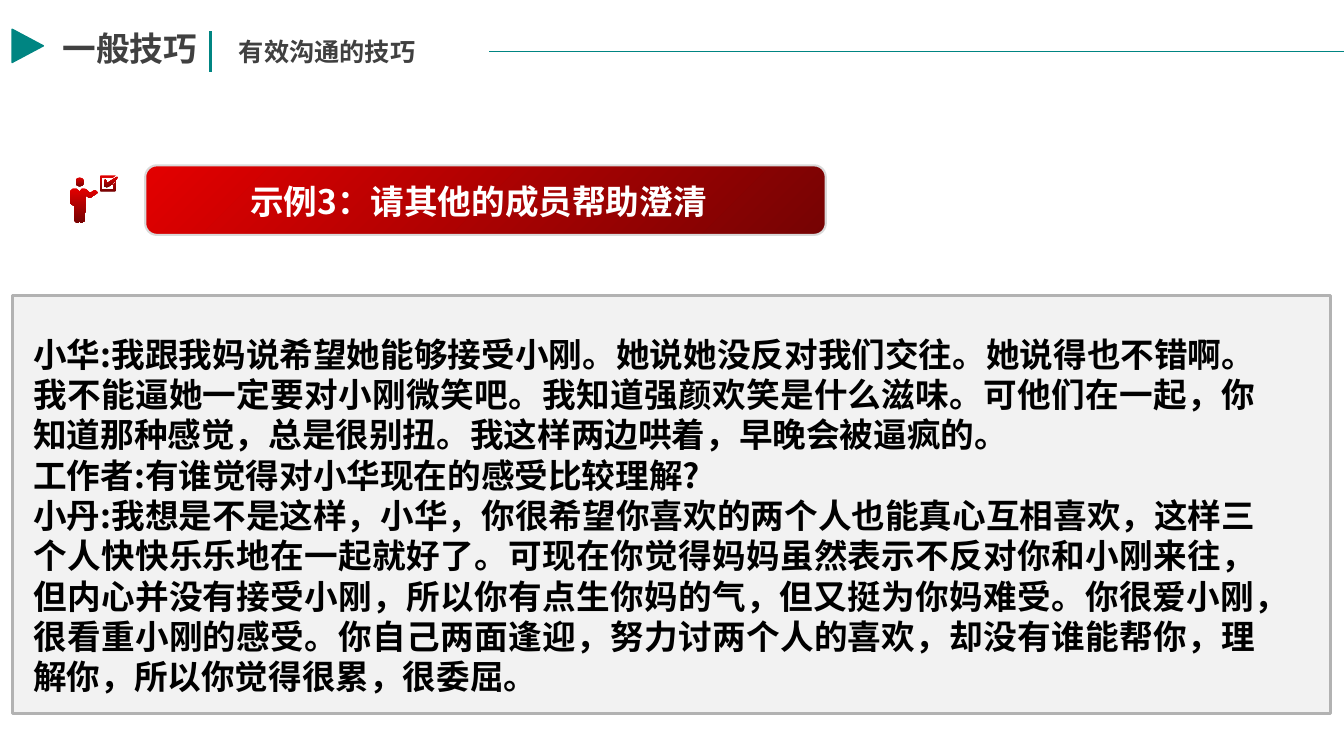
from lxml import etree
from pptx import Presentation
from pptx import util as u
from pptx.dml.color import RGBColor
from pptx.enum import shapes, text
from pptx.oxml.ns import qn

PX = 9144
FONT = "Noto Sans CJK SC"
COLORS = {
    "teal": "008582", "heading": "404040", "black": "000000", "white": "FFFFFF",
    "panel": "F2F2F2", "panel_edge": "B2B2B2", "banner_edge": "D9D9D9",
    "red": "E30000", "dark_red": "760303",
}
DIALOGUE = [
    ("小华", "我跟我妈说希望她能够接受小刚。她说她没反对我们交往。她说得也不错啊。"
     "我不能逼她一定要对小刚微笑吧。我知道强颜欢笑是什么滋味。可他们在一起，"
     "你知道那种感觉，总是很别扭。我这样两边哄着，早晚会被逼疯的。"),
    ("工作者", "有谁觉得对小华现在的感受比较理解?"),
    ("小丹", "我想是不是这样，小华，你很希望你喜欢的两个人也能真心互相喜欢，"
     "这样三个人快快乐乐地在一起就好了。可现在你觉得妈妈虽然表示不反对你和小刚来往，"
     "但内心并没有接受小刚，所以你有点生你妈的气，但又挺为你妈难受。你很爱小刚，"
     "很看重小刚的感受。你自己两面逢迎，努力讨两个人的喜欢，却没有谁能帮你，"
     "理解你，所以你觉得很累，很委屈。"),
]
BODY = [
    (84, 219), (81, 221), (79, 220), (76, 221), (74, 219), (74, 204), (73, 204),
    (70, 202), (69, 195), (70, 189), (72, 187), (76, 187), (79, 190), (81, 187),
    (84, 187), (86, 188), (89, 191), (90, 191), (93, 189), (95, 189), (97, 191),
    (96, 192), (93, 194), (90, 196), (88, 196), (85, 194), (85, 193),
]
CHECKBOX = [
    (100, 174), (115, 174), (112, 176), (101, 176), (101, 188), (113, 188),
    (113, 183), (115, 180), (115, 189), (114, 190), (100, 190), (99, 189), (99, 175),
]
TICK = [
    (105, 178), (103, 179), (104, 185), (106, 186), (111, 183), (117, 176),
    (116, 175), (112, 178), (106, 182),
]


class Deck:
    def __init__(self, width, height):
        self.prs = Presentation()
        self.prs.slide_width, self.prs.slide_height = width * PX, height * PX
        self.s = self.prs.slides.add_slide(self.prs.slide_layouts[1])

    def color(self, name):
        return RGBColor.from_string(COLORS[name])

    def paint(self, sp, fill, line=None, weight=1, angle=0):
        sp.shadow.inherit = False
        if isinstance(fill, tuple):
            sp.fill.gradient()
            sp.fill.gradient_angle = 360 - angle
            for stop, name, pos in zip(sp.fill.gradient_stops, fill, (0, 1)):
                stop.color.rgb = self.color(name)
                stop.position = pos
        else:
            sp.fill.solid()
            sp.fill.fore_color.rgb = self.color(fill)
        if line:
            sp.line.color.rgb = self.color(line)
            sp.line.width = u.Pt(weight)
        else:
            sp.line.fill.background()

    def shape(self, kind, box, fill, line=None, weight=1, angle=0, parent=None):
        sp = (parent or self.s).shapes.add_shape(kind, *(v * PX for v in box))
        self.paint(sp, fill, line, weight, angle)
        return sp

    def outline(self, points, fill, angle, parent):
        builder = parent.shapes.build_freeform(*points[0], scale=PX)
        builder.add_line_segments(points[1:])
        self.paint(builder.convert_to_shape(), fill, angle=angle)

    def line(self, x1, y1, x2, y2, color, weight):
        c = self.s.shapes.add_connector(
            shapes.MSO_CONNECTOR.STRAIGHT, *(v * PX for v in (x1, y1, x2, y2)))
        c.line.color.rgb = self.color(color)
        c.line.width = u.Pt(weight)
        etree.SubElement(c._element.spPr, qn("a:effectLst"))

    def fill_text(self, sp, paragraphs, size, color, align, wrap=True, margin=None):
        tf = sp.text_frame
        tf.word_wrap = wrap
        tf.auto_size = text.MSO_AUTO_SIZE.NONE
        tf.vertical_anchor = text.MSO_ANCHOR.TOP
        if margin is not None:
            tf.margin_left = tf.margin_right = tf.margin_top = tf.margin_bottom = margin
        for i, runs in enumerate(paragraphs):
            p = tf.add_paragraph() if i else tf.paragraphs[0]
            pPr = p._p.get_or_add_pPr()
            pPr.set("marL", "0")
            pPr.set("indent", "0")
            etree.SubElement(pPr, qn("a:buNone"))
            p.alignment = align
            p.space_before = u.Pt(0)
            p.line_spacing = u.Pt(size * 1.2)
            for words in runs:
                r = p.add_run()
                r.text = words
                r.font.name, r.font.size, r.font.bold = FONT, u.Pt(size), True
                r.font.color.rgb = self.color(color)
                etree.SubElement(r._r.rPr, qn("a:ea"), typeface=FONT)

    def placeholder(self, index, box, *style, **options):
        sp = self.s.placeholders[index]
        sp.left, sp.top, sp.width, sp.height = (v * PX for v in box)
        self.s.shapes._spTree.append(sp._element)
        self.fill_text(sp, *style, **options)

    def textbox(self, box, *style, **options):
        sp = self.s.shapes.add_textbox(*(v * PX for v in box))
        self.fill_text(sp, *style, **options)


def main():
    deck = Deck(1333, 750)
    kinds, align = shapes.MSO_SHAPE, text.PP_ALIGN
    reds = ("red", "dark_red")

    deck.shape(kinds.ROUNDED_RECTANGLE, (144, 164, 675, 69), reds, "banner_edge", 1.5, 45)
    deck.shape(kinds.RECTANGLE, (12, 293, 1308, 415), "panel", "panel_edge", 2)

    deck.placeholder(0, (52, 23, 433, 50), [["一般技巧"]], 24, "heading", align.LEFT)
    deck.textbox((227, 31, 195, 40), [["有效沟通的技巧"]], 18, "heading", align.LEFT, wrap=False)
    deck.line(209, 71, 209, 31, "teal", 1.75)
    deck.shape(kinds.ISOSCELES_TRIANGLE, (11, 30, 33, 31), "teal", "teal").rotation = 90
    deck.line(485, 51, 1333, 51, "teal", 1)

    deck.textbox((151, 179, 647, 40), [["示例3：请其他的成员帮助澄清"]],
                 24, "white", align.CENTER, margin=0)
    deck.placeholder(1, (23, 326, 1232, 373), [[who + ":", words] for who, words in DIALOGUE],
                     24, "black", align.JUSTIFY)

    icon = deck.s.shapes.add_group_shape()
    for points in (CHECKBOX, BODY, TICK):
        deck.outline(points, reds, 90, icon)
    deck.shape(kinds.OVAL, (75, 176, 8, 9), reds, angle=90, parent=icon)

    deck.prs.save("out.pptx")


if __name__ == "__main__":
    main()
